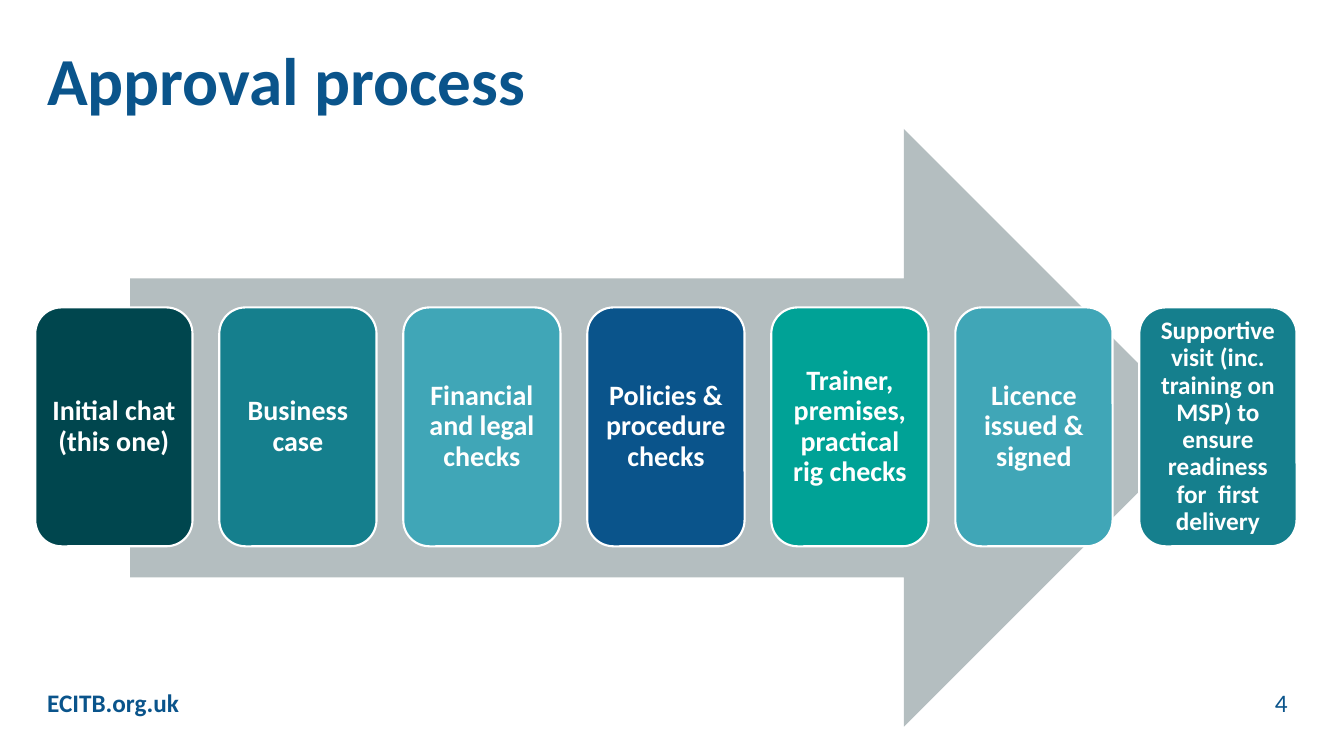
"""Build the approval process slide: seven steps along a wide arrow."""
from dataclasses import dataclass

from pptx import Presentation
from pptx.dml.color import RGBColor
from pptx.enum.shapes import MSO_SHAPE as Form
from pptx.enum.text import MSO_ANCHOR as Anchor, PP_ALIGN as Align
from pptx.util import Inches, Pt

COLORS = {
    "white": "FFFFFF",
    "grey": "B4BEC0",
    "navy": "0A548B",
    "dark": "00464E",
    "teal": "157F8D",
    "sky": "40A6B7",
    "green": "00A296",
}


@dataclass
class Step:
    text: str
    fill: str
    size: int = 20
    inset: float = 0.08


@dataclass
class Label:
    text: str
    left: float
    top: float
    width: float
    height: float
    size: int = 18
    bold: bool = True
    align: Align = Align.LEFT


STEPS = [
    Step("Initial chat (this one)", "dark"),
    Step("Business case", "teal"),
    Step("Financial and legal checks", "sky"),
    Step("Policies & procedure checks", "navy"),
    Step("Trainer, premises, practical rig checks", "green"),
    Step("Licence issued & signed", "sky"),
    Step("Supportive visit (inc. training on MSP) to ensure readiness for  first delivery",
         "teal", 18, 0.07),
]
LABELS = [
    Label("Approval process", 0.37, 0.42, 12.42, 1.07, size=48),
    Label("ECITB.org.uk", 0.37, 6.8, 11.1, 0.4),
    Label("4", 12.05, 6.8, 0.82, 0.4, bold=False, align=Align.RIGHT),
]
FIRST, LAST = 0.35, 11.3
PITCH = (LAST - FIRST) / (len(STEPS) - 1)


def color(name: str) -> RGBColor:
    return RGBColor.from_string(COLORS[name])


def write(frame, text: str, size: int, tint: str, bold: bool, align: Align) -> None:
    frame.word_wrap = True
    line = frame.paragraphs[0]
    line.text = text
    line.alignment = align
    line.line_spacing = 0.9
    font = line.font
    font.name, font.size, font.bold = "Calibri", Pt(size), bold
    font.color.rgb = color(tint)


def label(slide, item: Label) -> None:
    area = map(Inches, (item.left, item.top, item.width, item.height))
    box = slide.shapes.add_textbox(*area)
    write(box.text_frame, item.text, item.size, "navy", item.bold, item.align)


def block(slide, form: Form, fill: str, *area: float):
    shape = slide.shapes.add_shape(form, *map(Inches, area))
    shape.shadow.inherit = False
    shape.fill.solid()
    shape.fill.fore_color.rgb = color(fill)
    return shape


def card(slide, step: Step, left: float) -> None:
    shape = block(slide, Form.ROUNDED_RECTANGLE, step.fill, left, 3.05, 1.56, 2.37)
    shape.line.color.rgb = color("white")
    shape.line.width = Pt(1.5)
    frame = shape.text_frame
    frame.vertical_anchor = Anchor.MIDDLE
    frame.margin_left = frame.margin_right = Inches(step.inset)
    frame.margin_top = frame.margin_bottom = Inches(step.inset)
    write(frame, step.text, step.size, "white", True, Align.CENTER)


def main() -> None:
    deck = Presentation()
    deck.slide_width, deck.slide_height = Inches(13.33), Inches(7.5)
    slide = deck.slides.add_slide(deck.slide_layouts[6])
    for item in LABELS:
        label(slide, item)
    arrow = block(slide, Form.RIGHT_ARROW, "grey", 1.29, 1.28, 10.64, 5.93)
    arrow.line.fill.background()
    for i, step in enumerate(STEPS):
        card(slide, step, FIRST + i * PITCH)
    deck.save("out.pptx")


if __name__ == "__main__":
    main()
